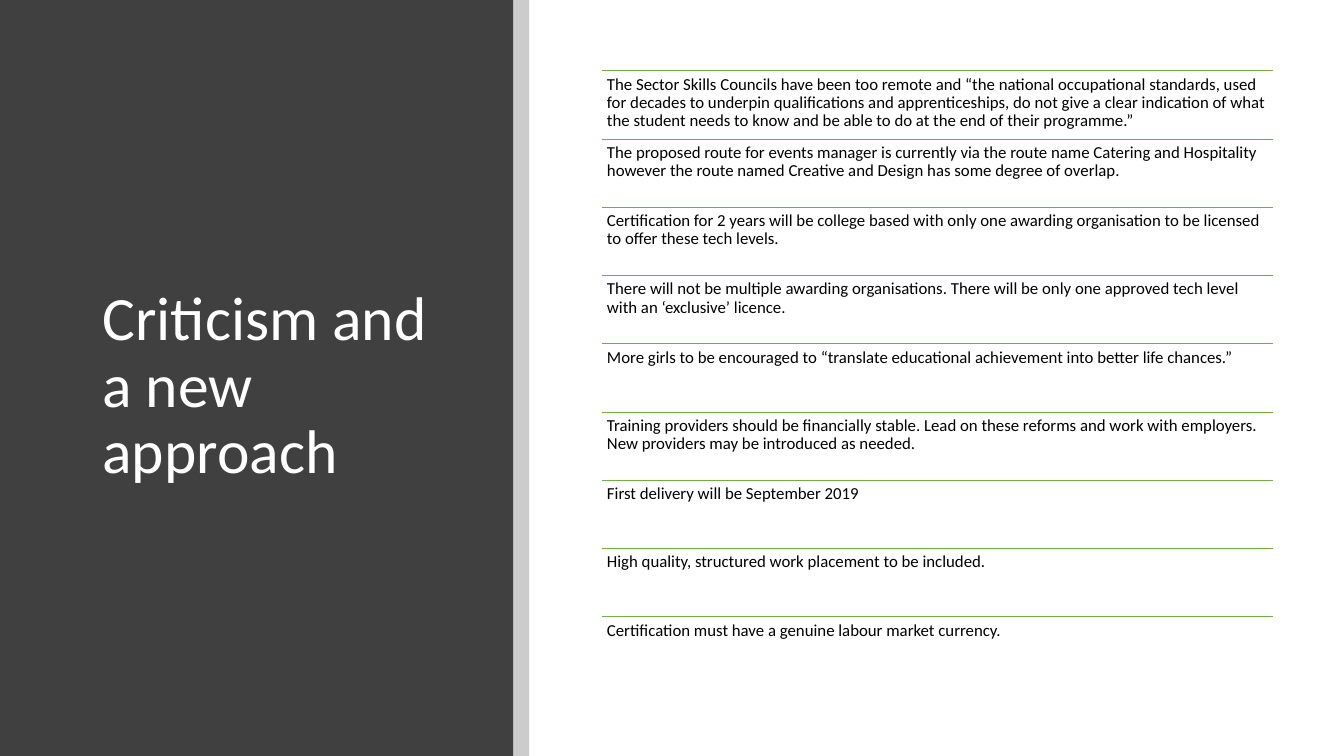
import lxml.etree
import pptx
import pptx.dml.color
import pptx.enum.shapes
import pptx.enum.text
import pptx.oxml.ns
import pptx.util

Pt = pptx.util.Pt
FONT = "Calibri"
COLOURS = {
    "panel": "404040",
    "strip": "000000",
    "title": "FFFFFF",
    "text": "000000",
    "rule": "70AD47",
}
POINTS = [
    "The Sector Skills Councils have been too remote and “the national occupational standards, used for decades "
    "to underpin qualifications and apprenticeships, do not give a clear indication of what the student needs to "
    "know and be able to do at the end of their programme.”",
    "The proposed route for events manager is currently via the route name Catering and Hospitality however the "
    "route named Creative and Design has some degree of overlap.",
    "Certification for 2 years will be college based with only one awarding organisation to be licensed to offer "
    "these tech levels.",
    "There will not be multiple awarding organisations. There will be only one approved tech level with an "
    "‘exclusive’ licence.",
    "More girls to be encouraged to “translate educational achievement into better life chances.”",
    "Training providers should be financially stable. Lead on these reforms and work with employers. New providers "
    "may be introduced as needed.",
    "First delivery will be September 2019",
    "High quality, structured work placement to be included.",
    "Certification must have a genuine labour market currency.",
]
PANEL_WIDTH, STRIP_WIDTH, SLIDE_HEIGHT = 366.5, 11.5, 540
LIST_LEFT, LIST_TOP, LIST_WIDTH, ROW_HEIGHT = 430, 50.5, 479.5, 48.75


def rgb(name):
    return pptx.dml.color.RGBColor.from_string(COLOURS[name])


def write(paragraph, text, size, colour):
    paragraph.alignment = pptx.enum.text.PP_ALIGN.LEFT
    paragraph.line_spacing = 0.9
    run = paragraph.add_run()
    run.text = text
    run.font.name = FONT
    run.font.size = Pt(size)
    run.font.color.rgb = rgb(colour)


presentation = pptx.Presentation()
presentation.slide_width = Pt(960)
presentation.slide_height = Pt(SLIDE_HEIGHT)
slide = presentation.slides.add_slide(presentation.slide_layouts.get_by_name("Title Only"))

# Dark panel and translucent strip, placed behind the title
title = slide.shapes.title
for name, left, width in [("panel", 0, PANEL_WIDTH), ("strip", PANEL_WIDTH, STRIP_WIDTH)]:
    shape = slide.shapes.add_shape(
        pptx.enum.shapes.MSO_SHAPE.RECTANGLE, Pt(left), Pt(0), Pt(width), Pt(SLIDE_HEIGHT))
    shape.shadow.inherit = False
    shape.fill.solid()
    shape.fill.fore_color.rgb = rgb(name)
    shape.line.fill.background()
    title.element.addprevious(shape.element)
strip_colour = shape.element.find(".//" + pptx.oxml.ns.qn("a:srgbClr"))
lxml.etree.SubElement(strip_colour, pptx.oxml.ns.qn("a:alpha"), val="20000")

title.left, title.top, title.width, title.height = Pt(66), Pt(64), Pt(263), Pt(425.5)
title.text_frame.auto_size = pptx.enum.text.MSO_AUTO_SIZE.NONE
title.text_frame.vertical_anchor = pptx.enum.text.MSO_ANCHOR.MIDDLE
write(title.text_frame.paragraphs[0], "Criticism and a new approach", 44, "title")

# Ruled list: a thin line above each point
group = slide.shapes.add_group_shape()
for row, point in enumerate(POINTS):
    top = Pt(LIST_TOP + row * ROW_HEIGHT)
    rule = group.shapes.add_connector(
        pptx.enum.shapes.MSO_CONNECTOR.STRAIGHT, Pt(LIST_LEFT), top, Pt(LIST_LEFT + LIST_WIDTH), top)
    rule.line.color.rgb = rgb("rule")
    rule.line.width = Pt(0.5)
    lxml.etree.SubElement(rule.element.spPr, pptx.oxml.ns.qn("a:effectLst"))

    box = group.shapes.add_textbox(Pt(LIST_LEFT), top, Pt(LIST_WIDTH), Pt(ROW_HEIGHT))
    frame = box.text_frame
    frame.word_wrap = True
    frame.margin_left = frame.margin_top = frame.margin_right = frame.margin_bottom = Pt(3.6)
    write(frame.paragraphs[0], point, 12, "text")

presentation.save("out.pptx")
